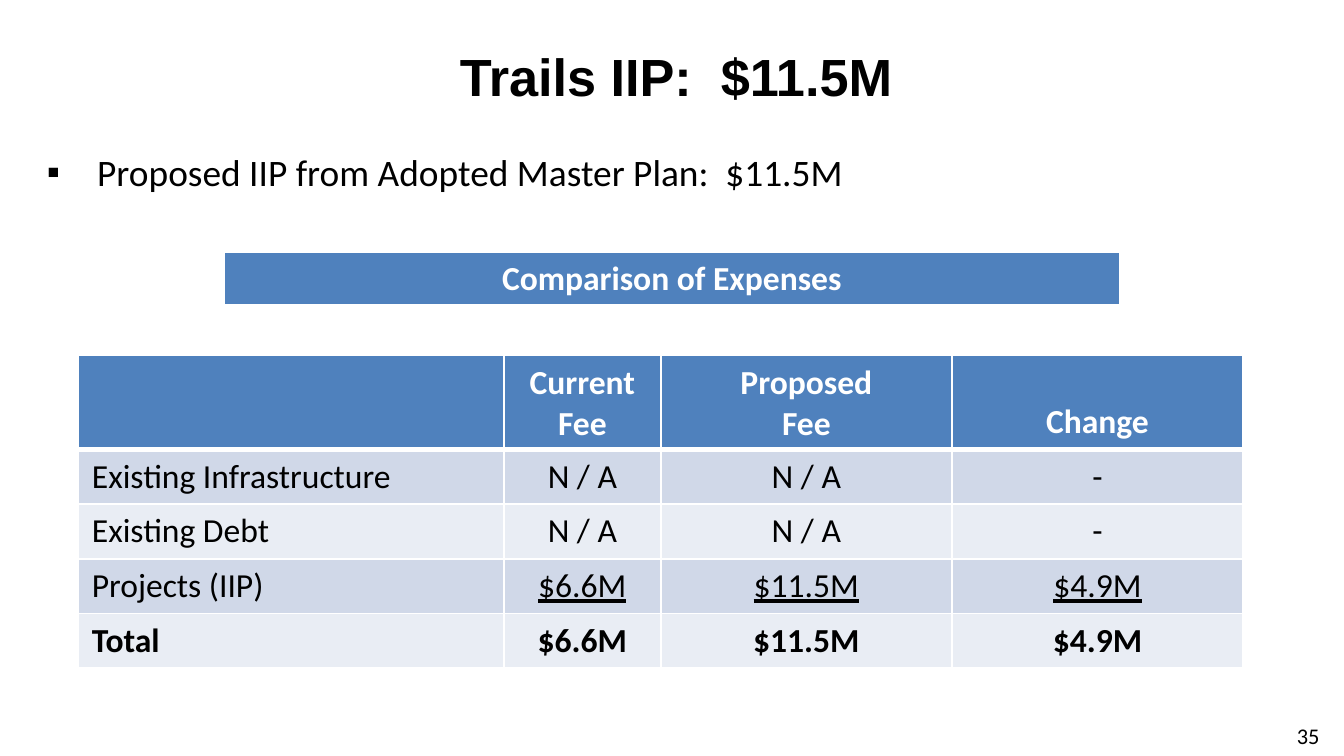
from lxml.etree import SubElement
from pptx import Presentation
from pptx.dml.color import RGBColor
from pptx.enum.text import MSO_ANCHOR, PP_ALIGN
from pptx.oxml.ns import qn
from pptx.util import Pt

EMU_PER_PX = 9525
WHITE, BLACK, BLUE = "FFFFFF", "000000", "4F81BD"
BANDS = ("D0D8E8", "E9EDF4")


def px(length):
    return length * EMU_PER_PX


def color(hex_string):
    return RGBColor.from_string(hex_string)


def write(frame, text, size=18, font="Calibri", ink=BLACK, bold=False,
          underline=False, align=PP_ALIGN.LEFT, bullet=None, indent=0):
    """Fill a text frame, one paragraph for each line of text."""
    for index, line in enumerate(text.split("\n")):
        paragraph = frame.paragraphs[0] if index == 0 else frame.add_paragraph()
        paragraph.alignment = align
        if bullet:
            properties = paragraph._p.get_or_add_pPr()
            properties.set("marL", str(px(indent)))
            properties.set("indent", str(-px(indent)))
            SubElement(properties, qn("a:buFont"), typeface="Arial")
            SubElement(properties, qn("a:buChar"), char=bullet)
        run = paragraph.add_run()
        run.text = line
        run.font.size = Pt(size)
        run.font.name = font
        run.font.bold = bold
        run.font.underline = underline
        run.font.color.rgb = color(ink)


def draw_borders(cell, bottom=1):
    properties = cell._tc.get_or_add_tcPr()
    for side, width in (("L", 1), ("R", 1), ("T", 1), ("B", bottom)):
        line = SubElement(properties, qn(f"a:ln{side}"), w=str(Pt(width)))
        fill = SubElement(line, qn("a:solidFill"))
        SubElement(fill, qn("a:srgbClr"), val=WHITE)


class SlideBuilder:
    def __init__(self, presentation):
        self.slide = presentation.slides.add_slide(presentation.slide_layouts[6])

    def text(self, left, top, width, height, text, anchor=MSO_ANCHOR.TOP, **style):
        shape = self.slide.shapes.add_textbox(px(left), px(top), px(width), px(height))
        shape.text_frame.word_wrap = True
        shape.text_frame.vertical_anchor = anchor
        write(shape.text_frame, text, **style)

    def table(self, left, top, widths, heights, rows):
        """Add a table whose first row is a header and whose other rows are banded."""
        shape = self.slide.shapes.add_table(
            len(rows), len(widths), px(left), px(top), px(sum(widths)), px(sum(heights)))
        table = shape.table
        table.horz_banding = False
        for column, width in zip(table.columns, widths):
            column.width = px(width)
        for row, height in zip(table.rows, heights):
            row.height = px(height)
        for row_index, values in enumerate(rows):
            header = row_index == 0
            for column_index, value in enumerate(values):
                cell = table.cell(row_index, column_index)
                draw_borders(cell, bottom=3 if header else 1)
                cell.fill.solid()
                cell.fill.fore_color.rgb = color(BLUE if header else BANDS[(row_index - 1) % 2])
                if header:
                    cell.vertical_anchor = MSO_ANCHOR.BOTTOM
                centered = header or column_index > 0
                write(cell.text_frame, value,
                      ink=WHITE if header else BLACK,
                      bold=header or values[0] == "Total",
                      underline=column_index > 0 and row_index == len(rows) - 2,
                      align=PP_ALIGN.CENTER if centered else PP_ALIGN.LEFT)


def main():
    presentation = Presentation()
    presentation.slide_width = px(960)
    presentation.slide_height = px(540)

    builder = SlideBuilder(presentation)
    builder.text(16, 9, 944, 90, "Trails IIP:  $11.5M ", anchor=MSO_ANCHOR.MIDDLE,
                 size=28, font="Arial", bold=True, align=PP_ALIGN.CENTER)
    builder.text(24, 102, 712, 121, "Proposed IIP from Adopted Master Plan:  $11.5M",
                 size=20, bullet="▪", indent=36)
    builder.text(912, 511, 40, 29, "35", size=12, align=PP_ALIGN.RIGHT)

    expenses = [
        ("", "Current\nFee", "Proposed\nFee", "Change"),
        ("Existing Infrastructure", "N / A", "N / A", "-"),
        ("Existing Debt", "N / A", "N / A", "-"),
        ("Projects (IIP)", "$6.6M", "$11.5M", "$4.9M"),
        ("Total", "$6.6M", "$11.5M", "$4.9M"),
    ]
    builder.table(56, 254, (304, 112, 208, 208), (67, 39, 39, 39, 39), expenses)
    builder.table(160, 180, (640,), (39,), [("Comparison of Expenses",)])

    presentation.save("out.pptx")


if __name__ == "__main__":
    main()
